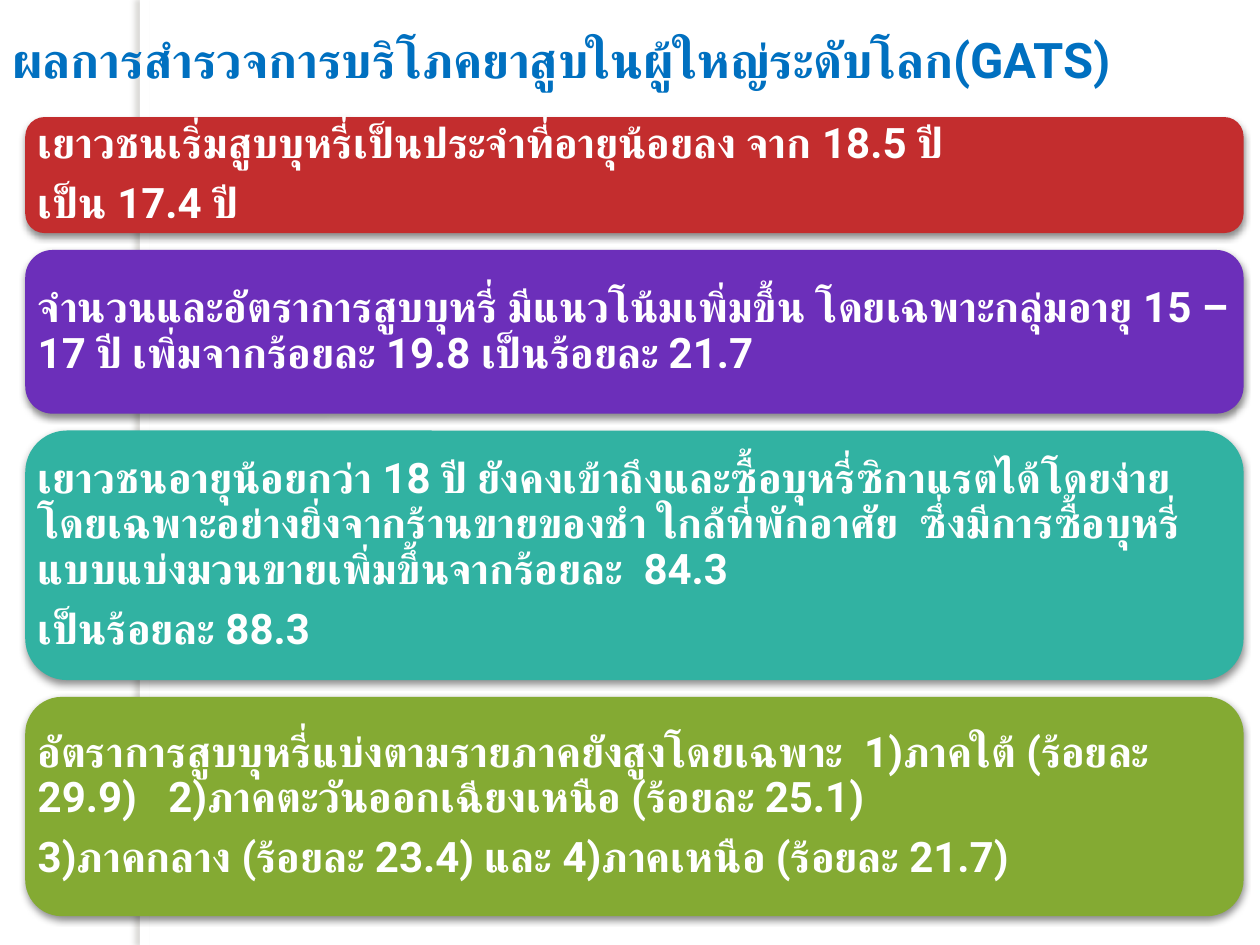
import pptx
import pptx.dml.color
import pptx.enum.shapes
import pptx.enum.text
import pptx.oxml
import pptx.oxml.ns
import pptx.util
from pptx.util import Cm, Pt

THEME = {
    "font": "Roboto",
    "title_size": 28,
    "body_size": 24,
    "title": "0070C0",
    "body": "FFFFFF",
    "band": "FFFFFF",
    "band_shadow": {"color": "736F63", "alpha": 25, "blur": 3, "distance": 3, "angle": 180},
    "card_shadow": {"color": "000000", "alpha": 45, "blur": 4, "distance": 2, "angle": 90},
}

TITLE = "ผลการสำรวจการบริโภคยาสูบในผู้ใหญ่ระดับโลก(GATS)"

# Fill colour, height in cm, paragraphs
FINDINGS = [
    ("C32D2E", 2.34, [
        "เยาวชนเริ่มสูบบุหรี่เป็นประจำที่อายุน้อยลง จาก 18.5 ปี",
        "เป็น 17.4 ปี",
    ]),
    ("6C2FBA", 3.3, [
        "จำนวนและอัตราการสูบบุหรี่ มีแนวโน้มเพิ่มขึ้น โดยเฉพาะกลุ่มอายุ 15 – 17 ปี "
        "เพิ่มจากร้อยละ 19.8 เป็นร้อยละ 21.7",
    ]),
    ("31B2A2", 5.03, [
        "เยาวชนอายุน้อยกว่า 18 ปี ยังคงเข้าถึงและซื้อบุหรี่ซิกาแรตได้โดยง่าย "
        "โดยเฉพาะอย่างยิ่งจากร้านขายของชำ ใกล้ที่พักอาศัย  "
        "ซึ่งมีการซื้อบุหรี่แบบแบ่งมวนขายเพิ่มขึ้นจากร้อยละ  84.3",
        "เป็นร้อยละ 88.3",
    ]),
    ("84AA33", 4.42, [
        "อัตราการสูบบุหรี่แบ่งตามรายภาคยังสูงโดยเฉพาะ  1)ภาคใต้ (ร้อยละ 29.9)   "
        "2)ภาคตะวันออกเฉียงเหนือ (ร้อยละ 25.1)",
        "3)ภาคกลาง (ร้อยละ 23.4) และ 4)ภาคเหนือ (ร้อยละ 21.7)",
    ]),
]

CARD_LEFT, CARD_TOP, CARD_WIDTH, CARD_GAP = 0.51, 2.36, 24.56, 0.34
CARD_PADDING = 0.25
CORNER_RATIO = 0.1667
CORNER_INSET = 0.29  # share of the corner radius that a rounded rectangle keeps free of text


def write_text(frame, paragraphs, *, size, color, line_spacing=None, space_after=0):
    frame.word_wrap = True
    frame.vertical_anchor = pptx.enum.text.MSO_ANCHOR.MIDDLE
    for index, text in enumerate(paragraphs):
        paragraph = frame.paragraphs[0] if index == 0 else frame.add_paragraph()
        paragraph.alignment = pptx.enum.text.PP_ALIGN.LEFT
        paragraph.line_spacing = line_spacing
        paragraph.space_after = Pt(space_after)
        run = paragraph.add_run()
        run.text = text
        run.font.size = Pt(size)
        run.font.bold = True
        run.font.name = THEME["font"]
        run.font.color.rgb = pptx.dml.color.RGBColor.from_string(color)
        # Thai takes its typeface from the complex-script font
        complex_font = pptx.oxml.parse_xml(
            f'<a:cs {pptx.oxml.ns.nsdecls("a")} typeface="{THEME["font"]}"/>')
        run.font._element.append(complex_font)


def add_shadow(shape, *, color, alpha, blur, distance, angle):
    shape._element.spPr.append(pptx.oxml.parse_xml(
        f'<a:effectLst {pptx.oxml.ns.nsdecls("a")}>'
        f'<a:outerShdw blurRad="{Pt(blur)}" dist="{Pt(distance)}" dir="{angle * 60000}" '
        f'rotWithShape="0"><a:srgbClr val="{color}"><a:alpha val="{alpha * 1000}"/>'
        f'</a:srgbClr></a:outerShdw></a:effectLst>'))


def add_panel(slide, kind, left, top, width, height, fill, shadow):
    shape = slide.shapes.add_shape(kind, Cm(left), Cm(top), Cm(width), Cm(height))
    shape.fill.solid()
    shape.fill.fore_color.rgb = pptx.dml.color.RGBColor.from_string(fill)
    shape.line.fill.background()
    add_shadow(shape, **shadow)
    return shape


def add_findings(slide):
    top = CARD_TOP
    for fill, height, paragraphs in FINDINGS:
        card = add_panel(slide, pptx.enum.shapes.MSO_SHAPE.ROUNDED_RECTANGLE,
                         CARD_LEFT, top, CARD_WIDTH, height, fill, THEME["card_shadow"])
        card.adjustments[0] = CORNER_RATIO
        frame = card.text_frame
        margin = Cm(max(0, CARD_PADDING - CORNER_INSET * CORNER_RATIO * height))
        frame.margin_left = frame.margin_right = margin
        frame.margin_top = frame.margin_bottom = margin
        write_text(frame, paragraphs, size=THEME["body_size"], color=THEME["body"],
                   line_spacing=0.9, space_after=0.35 * THEME["body_size"])
        top += height + CARD_GAP


def main():
    presentation = pptx.Presentation()
    presentation.slide_width, presentation.slide_height = Cm(25.4), Cm(19.05)
    slide = presentation.slides.add_slide(presentation.slide_layouts[6])

    add_panel(slide, pptx.enum.shapes.MSO_SHAPE.RECTANGLE, 2.82, 0, 0.2, 19.05,
              THEME["band"], THEME["band_shadow"])
    title = slide.shapes.add_textbox(Cm(0), Cm(0.4), Cm(25.3), Cm(1.58))
    write_text(title.text_frame, [TITLE], size=THEME["title_size"], color=THEME["title"])
    add_findings(slide)

    presentation.save("out.pptx")


if __name__ == "__main__":
    main()
